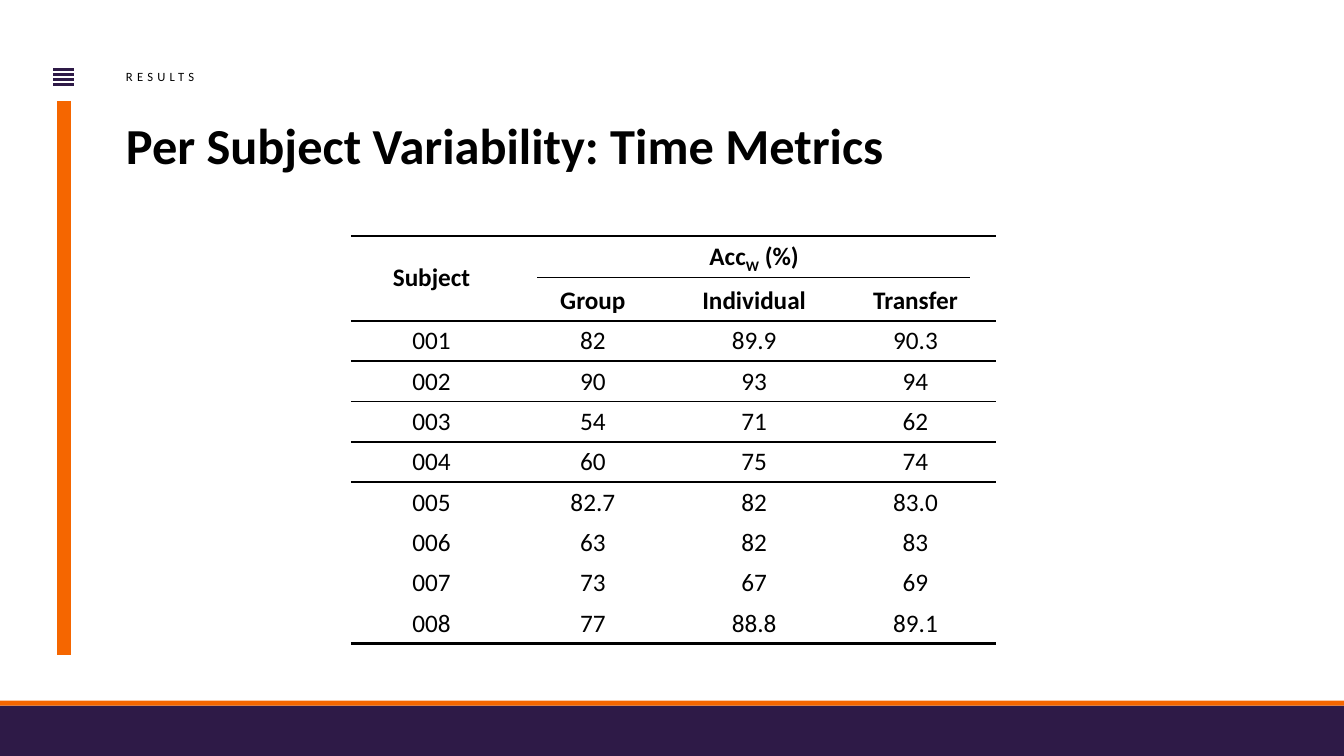
from pptx import Presentation
from pptx.dml.color import RGBColor
from pptx.enum.shapes import MSO_CONNECTOR, MSO_SHAPE
from pptx.enum.text import MSO_ANCHOR, PP_ALIGN
from pptx.oxml import parse_xml
from pptx.oxml.ns import nsdecls, qn
from pptx.util import Pt
from lxml.etree import SubElement

PX = 9144  # 100 px to the inch
FONT = "Calibri"
BLACK = RGBColor(0x00, 0x00, 0x00)
PURPLE = RGBColor(0x2E, 0x1A, 0x47)
ORANGE = RGBColor(0xF5, 0x66, 0x00)
NO_STYLE_TABLE = "{2D5ABB26-0587-4C30-8999-92F81FD0307C}"

METRICS = ["Group", "Individual", "Transfer"]
RESULTS = [
    ["001", "82", "89.9", "90.3"],
    ["002", "90", "93", "94"],
    ["003", "54", "71", "62"],
    ["004", "60", "75", "74"],
    ["005", "82.7", "82", "83.0"],
    ["006", "63", "82", "83"],
    ["007", "73", "67", "69"],
    ["008", "77", "88.8", "89.1"],
]
HEADER_ROWS = 2
RULED_SUBJECTS = 4


def add_line(slide, x1, y1, x2, y2, color, points):
    line = slide.shapes.add_connector(
        MSO_CONNECTOR.STRAIGHT, x1 * PX, y1 * PX, x2 * PX, y2 * PX)
    line.line.color.rgb = color
    line.line.width = Pt(points)
    SubElement(line._element.spPr, qn("a:effectLst"))


def add_bar(slide, left, top, width, height, color):
    bar = slide.shapes.add_shape(
        MSO_SHAPE.RECTANGLE, left * PX, top * PX, width * PX, height * PX)
    bar.shadow.inherit = False
    bar.fill.solid()
    bar.fill.fore_color.rgb = color
    bar.line.fill.background()


def style_font(paragraph, size, bold=False):
    paragraph.font.name = FONT
    paragraph.font.size = Pt(size)
    paragraph.font.bold = bold
    paragraph.font.color.rgb = BLACK


def add_text(slide, left, top, width, height, text, size, line_spacing, bold=False):
    """Add a one-line text box without margins and return its run."""
    box = slide.shapes.add_textbox(left * PX, top * PX, width * PX, height * PX)
    frame = box.text_frame
    frame.word_wrap = True
    frame.margin_left = frame.margin_top = frame.margin_right = frame.margin_bottom = 0
    paragraph = frame.paragraphs[0]
    paragraph.line_spacing = line_spacing
    run = paragraph.add_run()
    run.text = text
    style_font(paragraph, size, bold)
    return run


def add_menu_icon(slide, left, top, width, gap):
    for index in range(4):
        y = top + index * gap
        add_line(slide, left, y, left + width, y, PURPLE, 1.75)


def add_frame(slide, width, height):
    """Add the icon, the side rule and the footer band."""
    add_menu_icon(slide, 53, 69, 20, 5)
    add_line(slide, 63, 100, 63, height - 100, ORANGE, 10)
    add_bar(slide, 0, height - 50, width, 50, PURPLE)
    add_bar(slide, 0, height - 55, width, 5, ORANGE)


def add_heading(slide, left, top):
    add_text(slide, left, top + 55, 943, 50,
             "Per Subject Variability: Time Metrics", 36, 0.8, bold=True)
    section = add_text(slide, left, top, 417, 14, "RESULTS", 9, 0.9)
    section._r.get_or_add_rPr().set("spc", "300")


def set_border(cell, side, points):
    cell._tc.get_or_add_tcPr().append(parse_xml(
        f'<a:{side} {nsdecls("a")} w="{Pt(points)}"><a:solidFill>'
        f'<a:srgbClr val="{BLACK}"/></a:solidFill></a:{side}>'))


def fill_cell(cell, runs, bold):
    paragraph = cell.text_frame.paragraphs[0]
    paragraph.alignment = PP_ALIGN.CENTER
    for text, baseline in runs:
        run = paragraph.add_run()
        run.text = text
        if baseline:
            run._r.get_or_add_rPr().set("baseline", str(baseline))
    style_font(paragraph, 18, bold)
    if bold:
        cell.vertical_anchor = MSO_ANCHOR.MIDDLE


def add_results_table(slide, left, top, column_width, row_height):
    row_count, column_count = HEADER_ROWS + len(RESULTS), 1 + len(METRICS)
    frame = slide.shapes.add_table(
        row_count, column_count, left * PX, top * PX,
        column_count * column_width * PX, row_count * row_height * PX)
    frame._element.find(".//" + qn("a:tableStyleId")).text = NO_STYLE_TABLE
    table = frame.table
    table.first_row = table.horz_banding = False
    table.cell(0, 0).merge(table.cell(1, 0))
    table.cell(0, 1).merge(table.cell(0, column_count - 1))

    rows = [["Subject", None, None, None], [None, *METRICS], *RESULTS]
    last_ruled = HEADER_ROWS + RULED_SUBJECTS
    for r, values in enumerate(rows):
        for c, value in enumerate(values):
            cell = table.cell(r, c)
            if (r, c) == (0, 1):
                fill_cell(cell, [("Acc", 0), ("W", -25000), (" (%)", 0)], True)
            elif value:
                fill_cell(cell, [(value, 0)], r < HEADER_ROWS)
            if r == 0:
                set_border(cell, "lnT", 2.25)
            if r == row_count - 1:
                set_border(cell, "lnB", 2.25)
            elif 0 < r < last_ruled or (r, c) == (0, 0):
                set_border(cell, "lnB", 1.5)
            cell.fill.background()

    add_line(slide, left + column_width + 25, top + 41,
             left + column_count * column_width - 26, top + 41, BLACK, 1)


def main():
    width, height = 1333, 750
    presentation = Presentation()
    presentation.slide_width = width * PX
    presentation.slide_height = height * PX
    slide = presentation.slides.add_slide(presentation.slide_layouts[6])
    add_frame(slide, width, height)
    add_heading(slide, 125, 70)
    add_results_table(slide, 348, 234, 160, 38)
    presentation.save("out.pptx")


if __name__ == "__main__":
    main()
